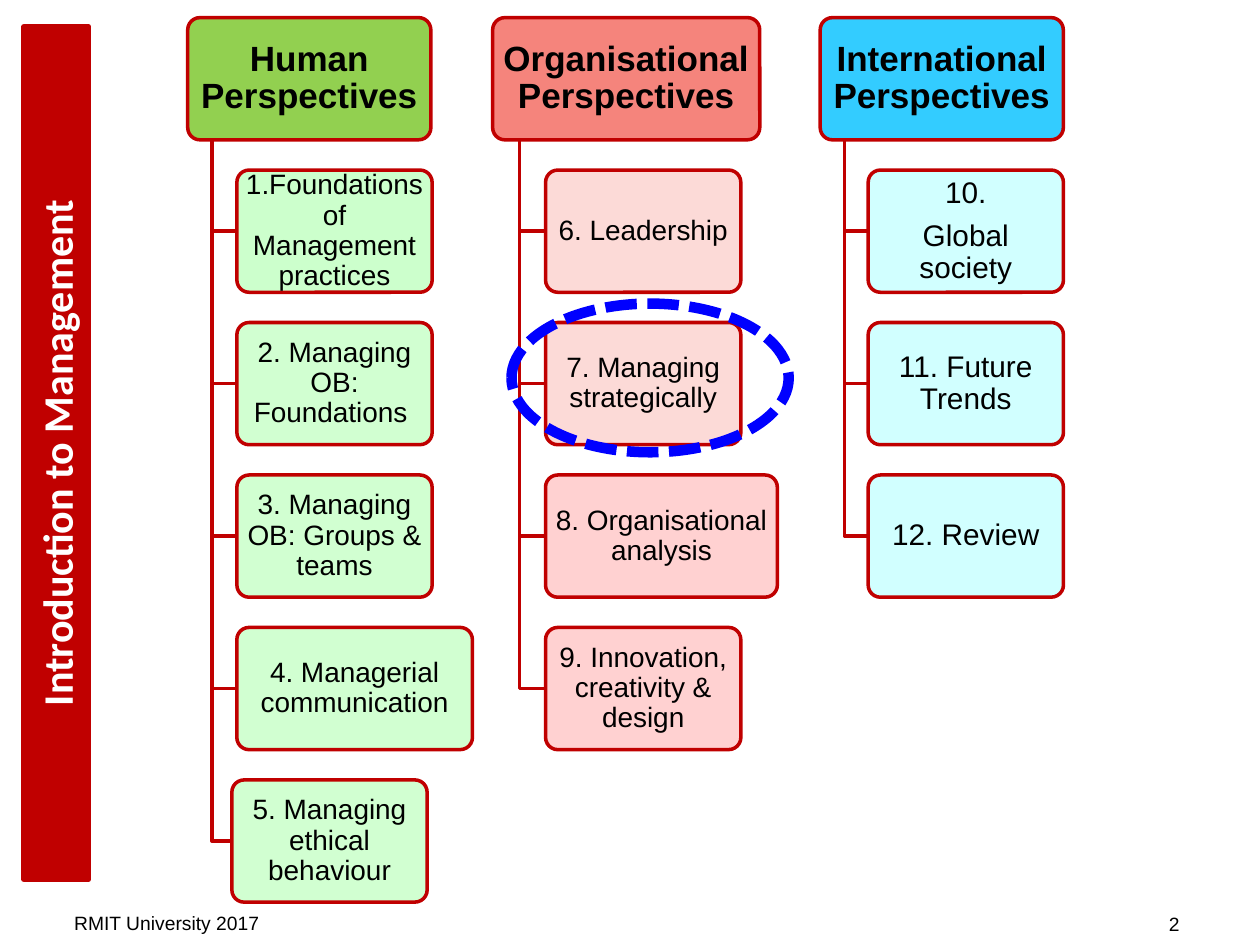
from lxml import etree
from pptx import Presentation
from pptx import util as u
from pptx.dml.color import RGBColor
from pptx.enum import dml, shapes, text
from pptx.oxml.ns import qn

SIZE = (10, 7.5)
RED = "C00000"
PALE_GREEN, PALE_ROSE, PINK, PALE_CYAN = "CCFFCC", "FCD6D3", "FFCCCC", "CCFFFF"

# Content: each topic is (text, fill, opacity %, layout changes)
PERSPECTIVES = [
    {"title": "Human Perspectives", "fill": "92D050", "left": 1.49, "width": 1.93,
     "indent": 0.39, "size": 16, "topics": [
         ("1.Foundations of Management practices", PALE_GREEN, 100, {}),
         ("2. Managing OB: Foundations ", PALE_GREEN, 90, {}),
         ("3. Managing OB: Groups & teams", PALE_GREEN, 90, {}),
         ("4. Managerial communication", PALE_GREEN, 90, {"width": 1.87}),
         ("5. Managing ethical behaviour", PALE_GREEN, 90, {"shift": -0.04})]},
    {"title": "Organisational Perspectives", "fill": "F5847C", "left": 3.91, "width": 2.12,
     "indent": 0.42, "size": 16, "topics": [
         ("6. Leadership", PALE_ROSE, 90, {}),
         ("7. Managing strategically", PALE_ROSE, 90, {}),
         ("8. Organisational analysis", PINK, 90, {"width": 1.84}),
         ("9. Innovation, creativity & design", PINK, 90, {})]},
    {"title": "International Perspectives", "fill": "33CCFF", "left": 6.51, "width": 1.93,
     "indent": 0.38, "size": 17, "topics": [
         ("10.\nGlobal society", PALE_CYAN, 90, {}),
         ("11. Future Trends", PALE_CYAN, 90, {}),
         ("12. Review", PALE_CYAN, 90, {})]},
]
FOOTERS = [("RMIT University 2017", 0.49, 7.18, text.PP_ALIGN.LEFT),
           ("2", 7.13, 7.19, text.PP_ALIGN.RIGHT)]

# Grid of rows
TOP, BOX_HEIGHT, ROW_PITCH, TOPIC_WIDTH = 0.14, 0.97, 1.21, 1.55

deck = Presentation()
deck.slide_width, deck.slide_height = map(u.Inches, SIZE)
slide = deck.slides.add_slide(deck.slide_layouts[6])


def colour(hex_value):
    return RGBColor.from_string(hex_value)


def outline(shape, hex_value, points):
    shape.shadow.inherit = False
    shape.line.color.rgb = colour(hex_value)
    shape.line.width = u.Pt(points)


def write(shape, words, size, align=text.PP_ALIGN.CENTER, ink="000000",
          font="Arial", bold=False, paragraph_format=None):
    frame = shape.text_frame
    frame.word_wrap = True
    frame.text = words
    for paragraph in frame.paragraphs:
        paragraph.alignment = align
        for name, value in (paragraph_format or {}).items():
            setattr(paragraph, name, value)
        for name, value in {"name": font, "size": u.Pt(size), "bold": bold}.items():
            setattr(paragraph.font, name, value)
        paragraph.font.color.rgb = colour(ink)


def add_shape(kind, *place):
    return slide.shapes.add_shape(kind, *map(u.Inches, place))


def box(words, left, top, width, fill, size, opacity=100, bold=False):
    card = add_shape(shapes.MSO_SHAPE.ROUNDED_RECTANGLE, left, top, width, BOX_HEIGHT)
    card.adjustments[0] = 0.1
    outline(card, RED, 2)
    card.fill.solid()
    card.fill.fore_color.rgb = colour(fill)
    if opacity < 100:
        srgb = card.fill._xPr.find(".//" + qn("a:srgbClr"))
        etree.SubElement(srgb, qn("a:alpha"), val=str(opacity * 1000))
    margins = {"margin_left": 0.03, "margin_right": 0.03,
               "margin_top": 0.02, "margin_bottom": 0.02}
    for name, value in margins.items():
        setattr(card.text_frame, name, u.Inches(value))
    card.text_frame.vertical_anchor = text.MSO_ANCHOR.MIDDLE
    write(card, words, size, bold=bold,
          paragraph_format={"line_spacing": 0.9, "space_after": u.Pt(6)})


def branch(trunk, start, end, middle):
    builder = slide.shapes.build_freeform(u.Inches(trunk), u.Inches(start))
    builder.add_line_segments([(u.Inches(trunk), u.Inches(middle)),
                               (u.Inches(end), u.Inches(middle))], close=False)
    elbow = builder.convert_to_shape()
    elbow.fill.background()
    outline(elbow, RED, 2)


# Perspective columns with their topics
for column in PERSPECTIVES:
    box(column["title"], column["left"], TOP, column["width"], column["fill"], 20, bold=True)
    trunk = column["left"] + column["width"] / 10
    for row, (words, fill, opacity, change) in enumerate(column["topics"], 1):
        left = column["left"] + column["indent"] + change.get("shift", 0)
        top = TOP + row * ROW_PITCH
        branch(trunk, TOP + BOX_HEIGHT, left, top + BOX_HEIGHT / 2)
        box(words, left, top, change.get("width", TOPIC_WIDTH), fill, column["size"], opacity)

# Vertical course title
banner = add_shape(shapes.MSO_SHAPE.RECTANGLE, -2.94, 3.34, 6.77, 0.51)
banner.rotation = 270
banner.fill.solid()
banner.fill.fore_color.rgb = colour(RED)
outline(banner, RED, 3)
write(banner, "Introduction to Management", 24, ink="FFFFFF", font="Calibri", bold=True)

# Dashed ring around the current topic
ring = add_shape(shapes.MSO_SHAPE.OVAL, 4.06, 2.41, 2.2, 1.18)
ring.fill.background()
outline(ring, "0000FF", 6)
ring.line.dash_style = dml.MSO_LINE.SQUARE_DOT

# Footer and slide number
for words, left, top, align in FOOTERS:
    footer = slide.shapes.add_textbox(*map(u.Inches, (left, top, 2.33, 0.24)))
    write(footer, words, 11, align)

deck.save("out.pptx")
